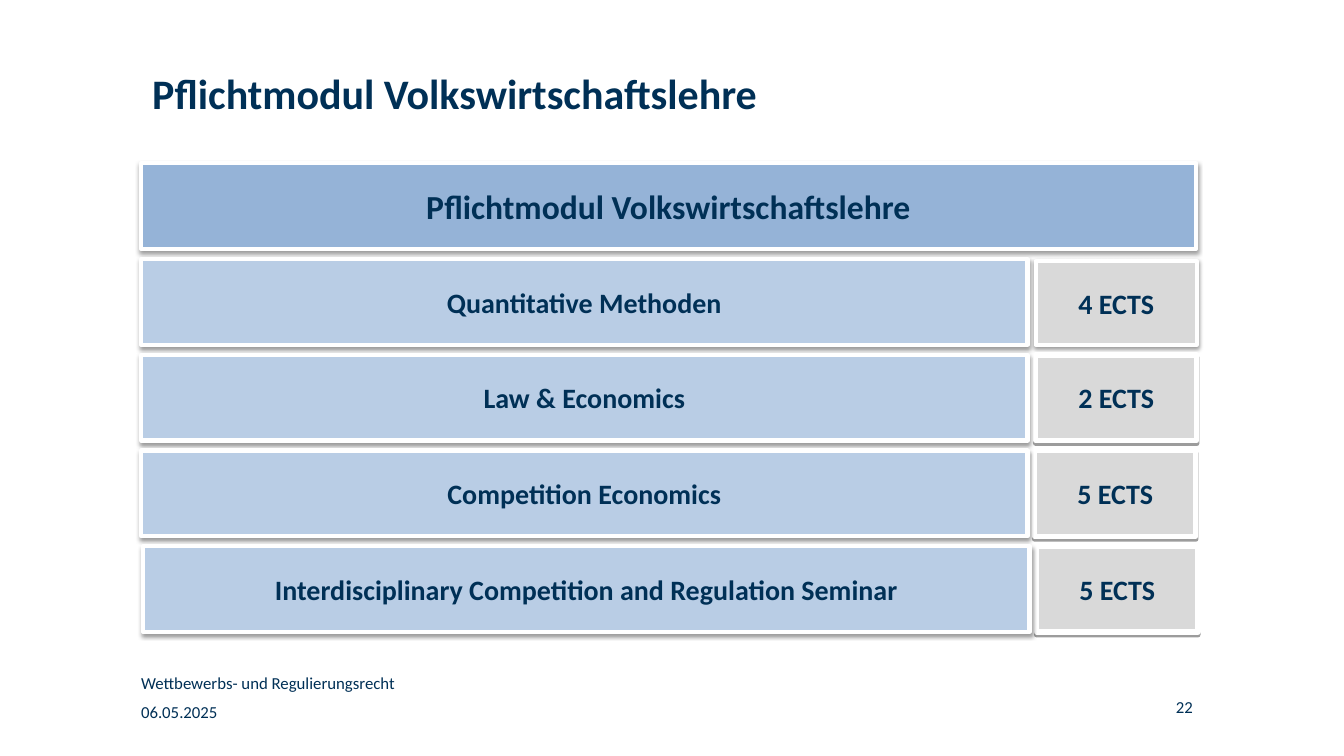
from pptx import Presentation
from pptx.dml.color import RGBColor
from pptx.enum.shapes import MSO_SHAPE
from pptx.enum.text import MSO_ANCHOR, PP_ALIGN
from pptx.oxml import parse_xml
from pptx.oxml.ns import nsdecls, qn
from pptx.util import Inches, Pt

NAVY = RGBColor(0x00, 0x30, 0x56)
WHITE = RGBColor(0xFF, 0xFF, 0xFF)
HEADER_BLUE = RGBColor(0x95, 0xB3, 0xD7)
COURSE_BLUE = RGBColor(0xB9, 0xCD, 0xE5)
CREDIT_GRAY = RGBColor(0xD9, 0xD9, 0xD9)
RECTANGLE = MSO_SHAPE.RECTANGLE
MIDDLE = MSO_ANCHOR.MIDDLE
LEFT, CENTER, RIGHT = PP_ALIGN.LEFT, PP_ALIGN.CENTER, PP_ALIGN.RIGHT

deck = Presentation()
deck.slide_width, deck.slide_height = Inches(13.34), Inches(7.5)
page = deck.slides.add_slide(deck.slide_layouts[6])


def write(frame, text, size, bold, align):
    frame.word_wrap = True
    para = frame.paragraphs[0]
    para.text = text
    para.alignment = align
    para.font.name = "Calibri"
    para.font.size = Pt(size)
    para.font.bold = bold
    para.font.color.rgb = NAVY


def add_bar(text, left, top, width, height, fill, size=20, border=3, blur=3.1, distance=1.6):
    bar = page.shapes.add_shape(RECTANGLE, Inches(left), Inches(top), Inches(width), Inches(height))
    bar.fill.solid()
    bar.fill.fore_color.rgb = fill
    bar.line.color.rgb = WHITE
    bar.line.width = Pt(border)
    # Soft shadow straight below the bar
    bar.shadow.inherit = False
    bar._element.spPr.find(qn("a:effectLst")).append(parse_xml(
        f'<a:outerShdw {nsdecls("a")} blurRad="{Pt(blur)}" dist="{Pt(distance)}" '
        'dir="5400000" algn="t" rotWithShape="0">'
        '<a:srgbClr val="000000"><a:alpha val="38000"/></a:srgbClr></a:outerShdw>'))
    bar.text_frame.vertical_anchor = MIDDLE
    write(bar.text_frame, text, size, True, CENTER)


# Title, footer, date and page number
for text, left, top, width, height, size, bold, align in [
    ("Pflichtmodul Volkswirtschaftslehre", 1.51, 0.67, 7.06, 1.37, 30, True, LEFT),
    ("06.05.2025", 1.4, 6.96, 3.11, 0.2, 12, False, LEFT),
    ("Wettbewerbs- und Regulierungsrecht", 1.4, 6.67, 6.26, 0.28, 12, False, LEFT),
    ("22", 10.3, 6.91, 1.54, 0.2, 12, False, RIGHT),
]:
    box = page.shapes.add_textbox(Inches(left), Inches(top), Inches(width), Inches(height))
    frame = box.text_frame
    frame.margin_left = frame.margin_right = frame.margin_top = frame.margin_bottom = 0
    write(frame, text, size, bold, align)

# Module header
BAR_HEIGHT, ROW_STEP, FIRST_ROW = 0.85, 0.95, 2.57
add_bar("Pflichtmodul Volkswirtschaftslehre", 1.4, 1.62, 10.47, BAR_HEIGHT, HEADER_BLUE, size=24)

# Credits: the first box is slightly lower, with a softer shadow
add_bar("4 ECTS", 10.28, 2.59, 1.6, 0.83, CREDIT_GRAY)
for row, (credit, left) in enumerate([("2 ECTS", 10.28), ("5 ECTS", 10.27), ("5 ECTS", 10.29)], 1):
    add_bar(credit, left, FIRST_ROW + row * ROW_STEP, 1.6, BAR_HEIGHT, CREDIT_GRAY,
            border=3.82, blur=0, distance=2)

# Courses
for row, (course, left) in enumerate([
    ("Quantitative Methoden", 1.4),
    ("Law & Economics", 1.4),
    ("Competition Economics", 1.4),
    ("Interdisciplinary Competition and Regulation Seminar", 1.42),
]):
    add_bar(course, left, FIRST_ROW + row * ROW_STEP, 8.8, BAR_HEIGHT, COURSE_BLUE)

deck.save("out.pptx")
